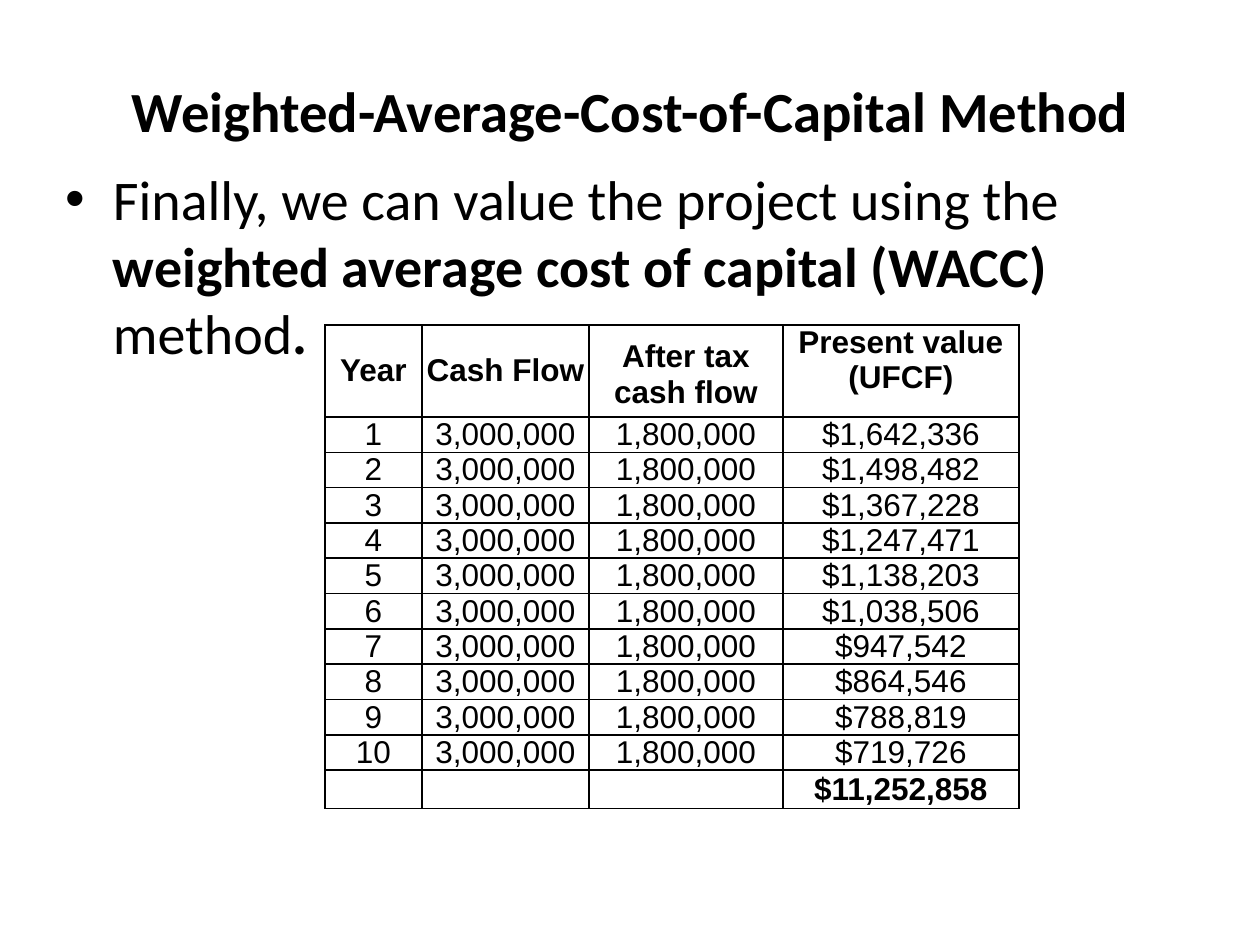
from lxml import etree
from pptx import Presentation
from pptx.dml.color import RGBColor
from pptx.enum.text import MSO_ANCHOR, PP_ALIGN
from pptx.oxml.ns import qn
from pptx.util import Pt

CENTER, LEFT = PP_ALIGN.CENTER, PP_ALIGN.LEFT
MIDDLE, TOP = MSO_ANCHOR.MIDDLE, MSO_ANCHOR.TOP
PX = 914400 // 126
BLACK = "000000"

TITLE = "Weighted-Average-Cost-of-Capital Method"
BODY = [
    ("Finally, we can value the project using the ", False),
    ("weighted average cost of capital (WACC) ", True),
    ("method", False),
    (".", True),
]
HEADS = ["Year", "Cash Flow", "After tax cash flow", "Present value (UFCF)"]
VALUES = [
    "$1,642,336", "$1,498,482", "$1,367,228", "$1,247,471", "$1,138,203",
    "$1,038,506", "$947,542", "$864,546", "$788,819", "$719,726",
]
TOTAL = "$11,252,858"
ROWS = [
    HEADS,
    *[[str(year), "3,000,000", "1,800,000", value]
      for year, value in enumerate(VALUES, 1)],
    ["", "", "", TOTAL],
]

TITLE_BOX = (63, 31, 1134, 158)
BODY_BOX = (53, 158, 1134, 624)
GRID_AT = (325, 325)
COLS = [97, 167, 194, 236]
HEAD_H, ROW_H = 92, 35
INSET = {"margin_left": 2, "margin_right": 2, "margin_top": 0, "margin_bottom": 0}


def px(*nums):
    return [num * PX for num in nums]


def color(code):
    return RGBColor.from_string(code)


def place(shape, box):
    for name, num in zip(("left", "top", "width", "height"), px(*box)):
        setattr(shape, name, num)


def write(par, runs, face, size, align):
    par.alignment = align
    for text, bold in runs:
        run = par.add_run()
        run.text = text
        style = {"name": face, "size": Pt(size), "bold": bold}
        for name, value in style.items():
            setattr(run.font, name, value)
        run.font.color.rgb = color(BLACK)


def border(cell):
    props = cell._tc.get_or_add_tcPr()
    for spot, side in enumerate(("lnL", "lnR", "lnT", "lnB")):
        line = etree.Element(qn("a:" + side), w=str(Pt(1)))
        fill = etree.SubElement(line, qn("a:solidFill"))
        etree.SubElement(fill, qn("a:srgbClr"), val=BLACK)
        props.insert(spot, line)


def add_grid(slide):
    size = px(sum(COLS), HEAD_H + ROW_H * (len(ROWS) - 1))
    table = slide.shapes.add_table(
        len(ROWS), len(COLS), *px(*GRID_AT), *size).table
    table.first_row = table.horz_banding = False
    for col, width in zip(table.columns, px(*COLS)):
        col.width = width
    for i, texts in enumerate(ROWS):
        table.rows[i].height = (ROW_H if i else HEAD_H) * PX
        for j, text in enumerate(texts):
            cell = table.cell(i, j)
            for name, num in INSET.items():
                setattr(cell, name, num * PX)
            cell.vertical_anchor = TOP if text == HEADS[3] else MIDDLE
            if text == HEADS[2]:
                cell.margin_top = 7 * PX
            cell.fill.background()
            border(cell)
            if text:
                bold = i == 0 or text == TOTAL
                par = cell.text_frame.paragraphs[0]
                write(par, [(text, bold)], "Arial", 18, CENTER)


def main():
    deck = Presentation()
    deck.slide_width, deck.slide_height = px(1260, 945)
    slide = deck.slides.add_slide(deck.slide_layouts.get_by_name("Title and Content"))
    title, body = slide.placeholders
    place(title, TITLE_BOX)
    title.text_frame.vertical_anchor = MIDDLE
    write(title.text_frame.paragraphs[0], [(TITLE, True)], "Calibri", 32.4, CENTER)
    place(body, BODY_BOX)
    write(body.text_frame.paragraphs[0], BODY, "Calibri", 32, LEFT)
    add_grid(slide)
    deck.save("out.pptx")


if __name__ == "__main__":
    main()
